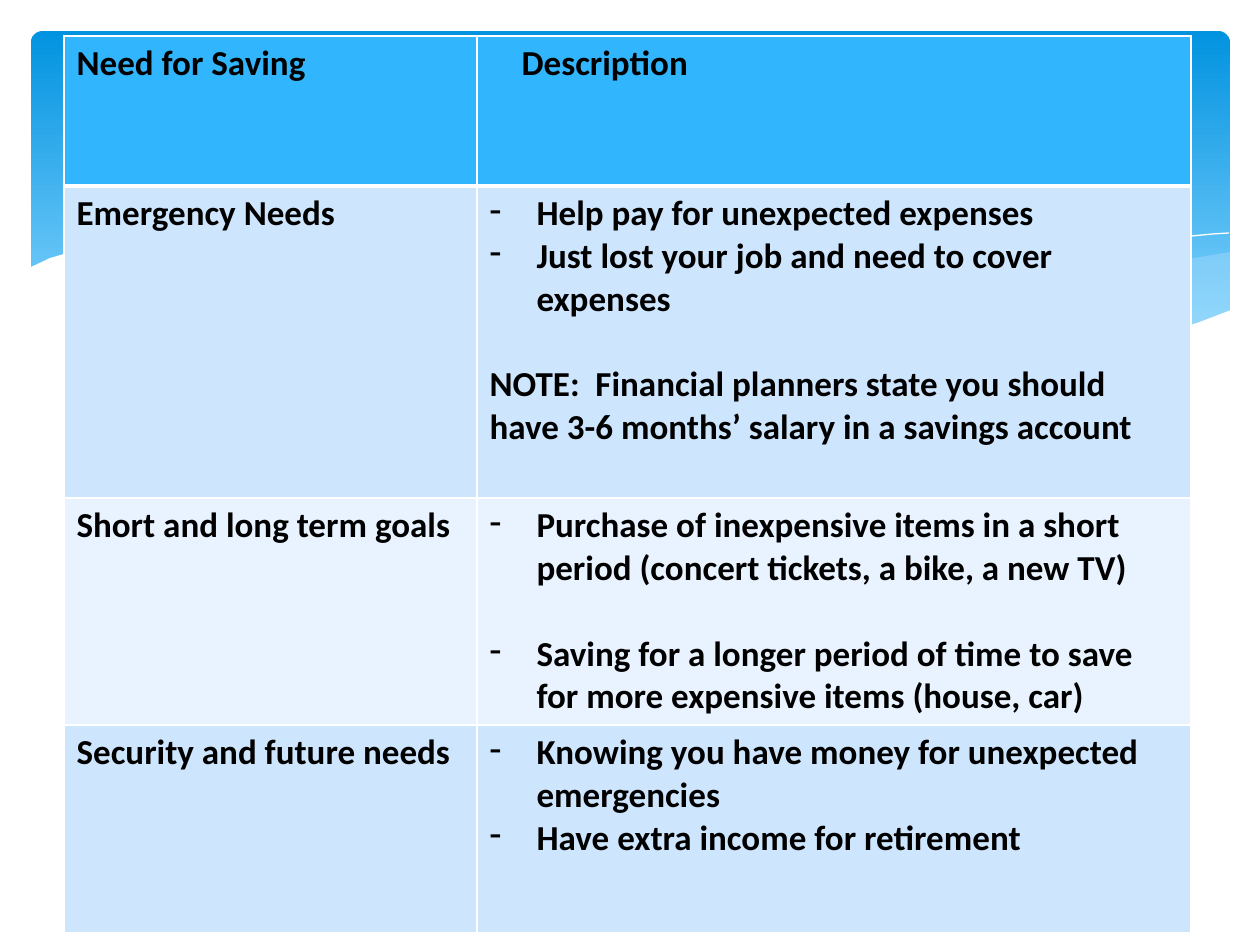
import pptx
import pptx.util
import pptx.dml.color
import pptx.enum.shapes
import pptx.oxml
import pptx.oxml.ns

RGBColor = pptx.dml.color.RGBColor
Pt = pptx.util.Pt

WHITE = RGBColor(0xFF, 0xFF, 0xFF)
BLACK = RGBColor(0x00, 0x00, 0x00)
BAND_TOP = RGBColor(0x02, 0x93, 0xE0)
BAND_BOTTOM = RGBColor(0x83, 0xD3, 0xFE)
PALE_WAVE = RGBColor(0xC6, 0xE7, 0xFC)
HEADER_BLUE = RGBColor(0x31, 0xB6, 0xFD)
ROW_BLUE = RGBColor(0xCE, 0xE5, 0xFE)
ROW_PALE = RGBColor(0xE8, 0xF3, 0xFF)

PIXELS_PER_INCH = 126
LINE_HEIGHT = Pt(24.4)
BULLET_INDENT = 47
HEADER_INDENT = 32

PALE_WAVE_POINTS = [
    (1230, 252), (1178, 261), (1123, 272), (1085, 281), (1014, 299),
    (919, 319), (833, 334), (888, 341), (954, 348), (1012, 350),
    (1076, 348), (1130, 340), (1178, 330), (1213, 318), (1230, 311)]
WAVE_LINE_POINTS = [
    (772, 324), (823, 310), (907, 289), (978, 272), (1053, 257),
    (1128, 244), (1182, 237), (1213, 234), (1229, 233)]
WHITE_WAVE_POINTS = [
    (1231, 310), (1197, 323), (1159, 334), (1118, 341), (1071, 347),
    (1019, 349), (959, 347), (892, 340), (816, 330), (730, 315),
    (634, 294), (563, 277), (493, 260), (428, 248), (341, 237),
    (266, 232), (203, 232), (150, 236), (107, 243), (74, 251),
    (50, 258), (29, 268), (29, 415), (1231, 415)]

COLUMN_WIDTHS = [413, 714]
ROW_HEIGHTS = [150, 312, 227, 208]
ROW_FILLS = [HEADER_BLUE, ROW_BLUE, ROW_PALE, ROW_BLUE]
# Each description line: text, has a dash, has a gap above
ROWS = [
    ("Emergency Needs", [
        ("Help pay for unexpected expenses", True, False),
        ("Just lost your job and need to cover expenses", True, False),
        ("NOTE:  Financial planners state you should have 3-6 months’ "
         "salary in a savings account", False, True)]),
    ("Short and long term goals", [
        ("Purchase of inexpensive items in a short period "
         "(concert tickets, a bike, a new TV)", True, False),
        ("Saving for a longer period of time to save for more "
         "expensive items (house, car)", True, True)]),
    ("Security and future needs", [
        ("Knowing you have money for unexpected emergencies", True, False),
        ("Have extra income for retirement", True, False)]),
]


def px(length):
    return pptx.util.Emu(round(length * 914400 / PIXELS_PER_INCH))


def add_band(slide):
    band = slide.shapes.add_shape(
        pptx.enum.shapes.MSO_SHAPE.ROUNDED_RECTANGLE,
        px(31), px(31), px(1199), px(340))
    band.adjustments[0] = 0.034
    band.shadow.inherit = False
    band.line.fill.background()
    band.fill.gradient()
    band.fill.gradient_angle = 270
    start, end = band.fill.gradient_stops
    start.color.rgb, start.position = BAND_TOP, 0
    end.color.rgb, end.position = BAND_BOTTOM, 0.9


def build_outline(slide, points, close):
    corners = [(px(x), px(y)) for x, y in points]
    builder = slide.shapes.build_freeform(*corners[0])
    builder.add_line_segments(corners[1:], close=close)
    outline = builder.convert_to_shape()
    outline.shadow.inherit = False
    return outline


def add_wave(slide, points, color, opacity=100):
    wave = build_outline(slide, points, True)
    wave.line.fill.background()
    wave.fill.solid()
    wave.fill.fore_color.rgb = color
    if opacity < 100:
        color_element = wave.fill._xPr.find(".//" + pptx.oxml.ns.qn("a:srgbClr"))
        alpha = color_element.makeelement(pptx.oxml.ns.qn("a:alpha"), {"val": str(opacity * 1000)})
        color_element.append(alpha)


def add_wave_line(slide, points):
    wave = build_outline(slide, points, False)
    wave.fill.background()
    wave.line.color.rgb = WHITE
    wave.line.width = Pt(0)


def set_borders(cell, widths):
    """Draw white borders; widths gives points by side, in the order L, R, T, B."""
    properties = cell._tc.get_or_add_tcPr()
    for position, (side, width) in enumerate(zip("LRTB", widths)):
        border = pptx.oxml.parse_xml(
            f'<a:ln{side} {pptx.oxml.ns.nsdecls("a")} w="{Pt(width)}">'
            f'<a:solidFill><a:srgbClr val="{WHITE}"/></a:solidFill></a:ln{side}>')
        properties.insert(position, border)


def indent_paragraph(paragraph, left, dash=False):
    properties = paragraph._p.get_or_add_pPr()
    properties.set("marL", str(px(left)))
    if dash:
        properties.set("indent", str(-px(left)))
        bullet = properties.makeelement(pptx.oxml.ns.qn("a:buChar"), {"char": "-"})
        properties.append(bullet)


def format_cell(cell, fill):
    cell.fill.solid()
    cell.fill.fore_color.rgb = fill
    for paragraph in cell.text_frame.paragraphs:
        for run in paragraph.runs:
            run.font.name = "Calibri"
            run.font.size = Pt(20)
            run.font.bold = True
            run.font.color.rgb = BLACK


def fill_description(cell, lines):
    cell.text_frame.text = "\n".join(text for text, _, _ in lines)
    for paragraph, (_, dash, gap) in zip(cell.text_frame.paragraphs, lines):
        if gap:
            paragraph.space_before = LINE_HEIGHT
        if dash:
            indent_paragraph(paragraph, BULLET_INDENT, dash=True)


def add_savings_table(slide):
    frame = slide.shapes.add_table(
        len(ROW_HEIGHTS), len(COLUMN_WIDTHS), px(64), px(36),
        px(sum(COLUMN_WIDTHS)), px(sum(ROW_HEIGHTS)))
    table = frame.table
    for column, width in zip(table.columns, COLUMN_WIDTHS):
        column.width = px(width)
    for row, height in zip(table.rows, ROW_HEIGHTS):
        row.height = px(height)

    table.cell(0, 0).text_frame.text = "Need for Saving"
    description = table.cell(0, 1).text_frame
    description.text = "Description"
    indent_paragraph(description.paragraphs[0], HEADER_INDENT)
    for index, (need, lines) in enumerate(ROWS, start=1):
        table.cell(index, 0).text_frame.text = need
        fill_description(table.cell(index, 1), lines)

    for index, (row, fill) in enumerate(zip(table.rows, ROW_FILLS)):
        top = 3 if index == 1 else 1
        bottom = 3 if index == 0 else 1
        for cell in row.cells:
            format_cell(cell, fill)
            set_borders(cell, (1, 1, top, bottom))


def main():
    presentation = pptx.Presentation()
    presentation.slide_width = px(1260)
    presentation.slide_height = px(945)
    slide = presentation.slides.add_slide(presentation.slide_layouts[6])
    add_band(slide)
    add_wave(slide, PALE_WAVE_POINTS, PALE_WAVE, opacity=29)
    add_wave_line(slide, WAVE_LINE_POINTS)
    add_wave(slide, WHITE_WAVE_POINTS, WHITE)
    add_savings_table(slide)
    presentation.save("out.pptx")


if __name__ == "__main__":
    main()
